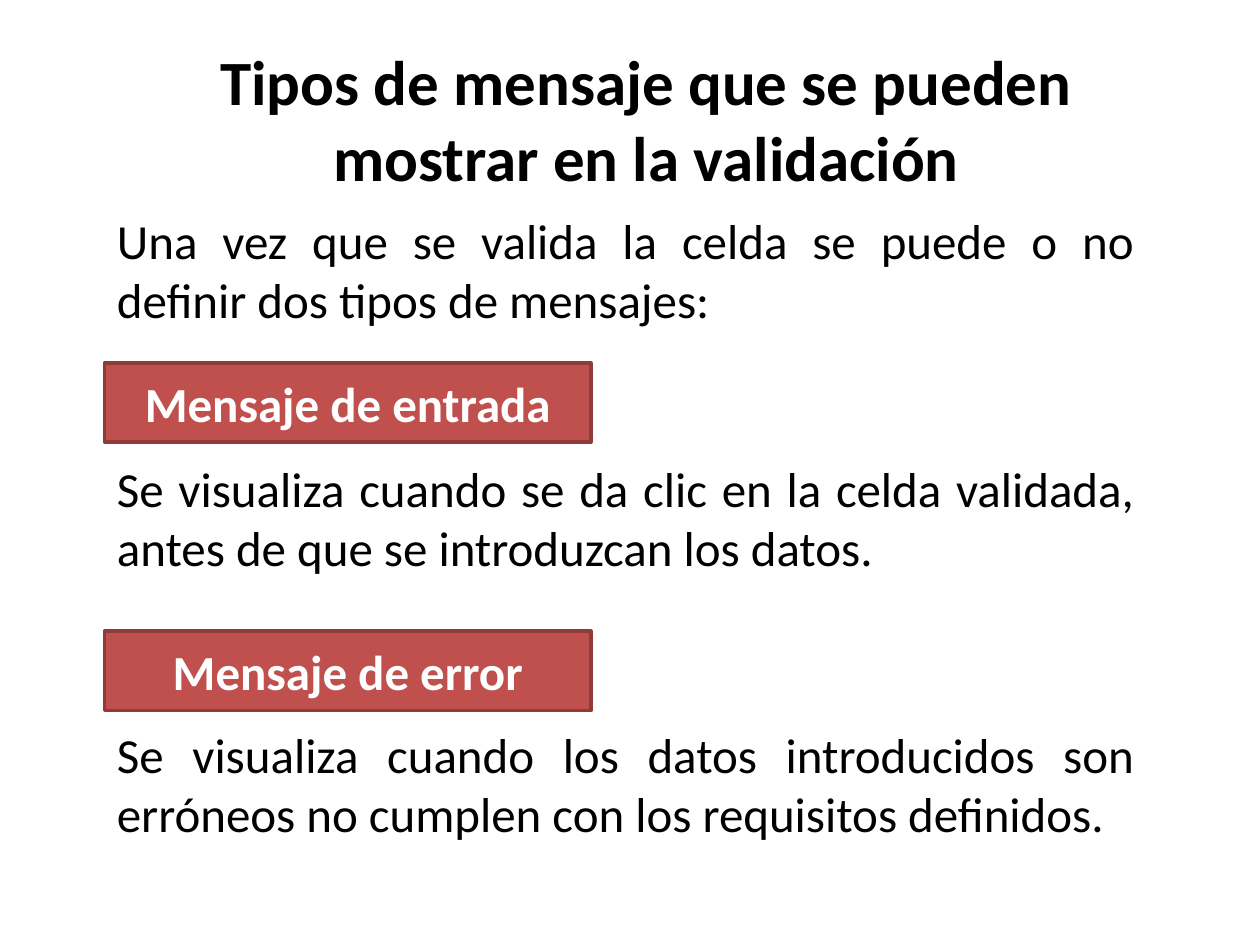
import pptx
import pptx.util
import pptx.dml.color
import pptx.enum.shapes
import pptx.enum.text

Inches = pptx.util.Inches
Pt = pptx.util.Pt
ALIGN = pptx.enum.text.PP_ALIGN
COLORS = {"text": "000000", "label_text": "FFFFFF", "label": "C0504D", "border": "8E3B39"}


def color(name):
    return pptx.dml.color.RGBColor.from_string(COLORS[name])


def write(shape, text, size, align, color_name, bold):
    shape.text_frame.word_wrap = True
    paragraph = shape.text_frame.paragraphs[0]
    paragraph.alignment = align
    run = paragraph.add_run()
    run.text = text
    run.font.name = "Calibri"
    run.font.size = Pt(size)
    run.font.bold = bold
    run.font.color.rgb = color(color_name)


presentation = pptx.Presentation()
presentation.slide_width = Inches(10)
presentation.slide_height = Inches(7.5)
slide = presentation.slides.add_slide(presentation.slide_layouts[6])

title = slide.shapes.add_textbox(Inches(0.91), Inches(0.29), Inches(8.44), Inches(1.31))
title.text_frame.auto_size = pptx.enum.text.MSO_AUTO_SIZE.SHAPE_TO_FIT_TEXT
write(title, "Tipos de mensaje que se pueden mostrar en la validación", 36, ALIGN.CENTER, "text", True)

left = Inches(0.83)
sections = [
    (None, None, 1.62, "Una vez que se valida la celda se puede o no definir dos tipos de mensajes:"),
    ("Mensaje de entrada", 2.88, 3.59,
     "Se visualiza cuando se da clic en la celda validada, antes de que se introduzcan los datos."),
    ("Mensaje de error", 5.01, 5.7,
     "Se visualiza cuando los datos introducidos son erróneos no cumplen con los requisitos definidos."),
]

for heading, heading_top, description_top, description in sections:
    if heading:
        label = slide.shapes.add_shape(
            pptx.enum.shapes.MSO_SHAPE.RECTANGLE, left, Inches(heading_top), Inches(3.86), Inches(0.63))
        label.shadow.inherit = False
        label.fill.solid()
        label.fill.fore_color.rgb = color("label")
        label.line.color.rgb = color("border")
        label.line.width = Pt(2)
        label.text_frame.vertical_anchor = pptx.enum.text.MSO_ANCHOR.MIDDLE
        write(label, heading, 28, ALIGN.CENTER, "label_text", True)
    body = slide.shapes.add_textbox(left, Inches(description_top), Inches(8.27), Inches(1.04))
    body.text_frame.auto_size = pptx.enum.text.MSO_AUTO_SIZE.SHAPE_TO_FIT_TEXT
    write(body, description, 28, ALIGN.JUSTIFY, "text", False)

presentation.save("out.pptx")
